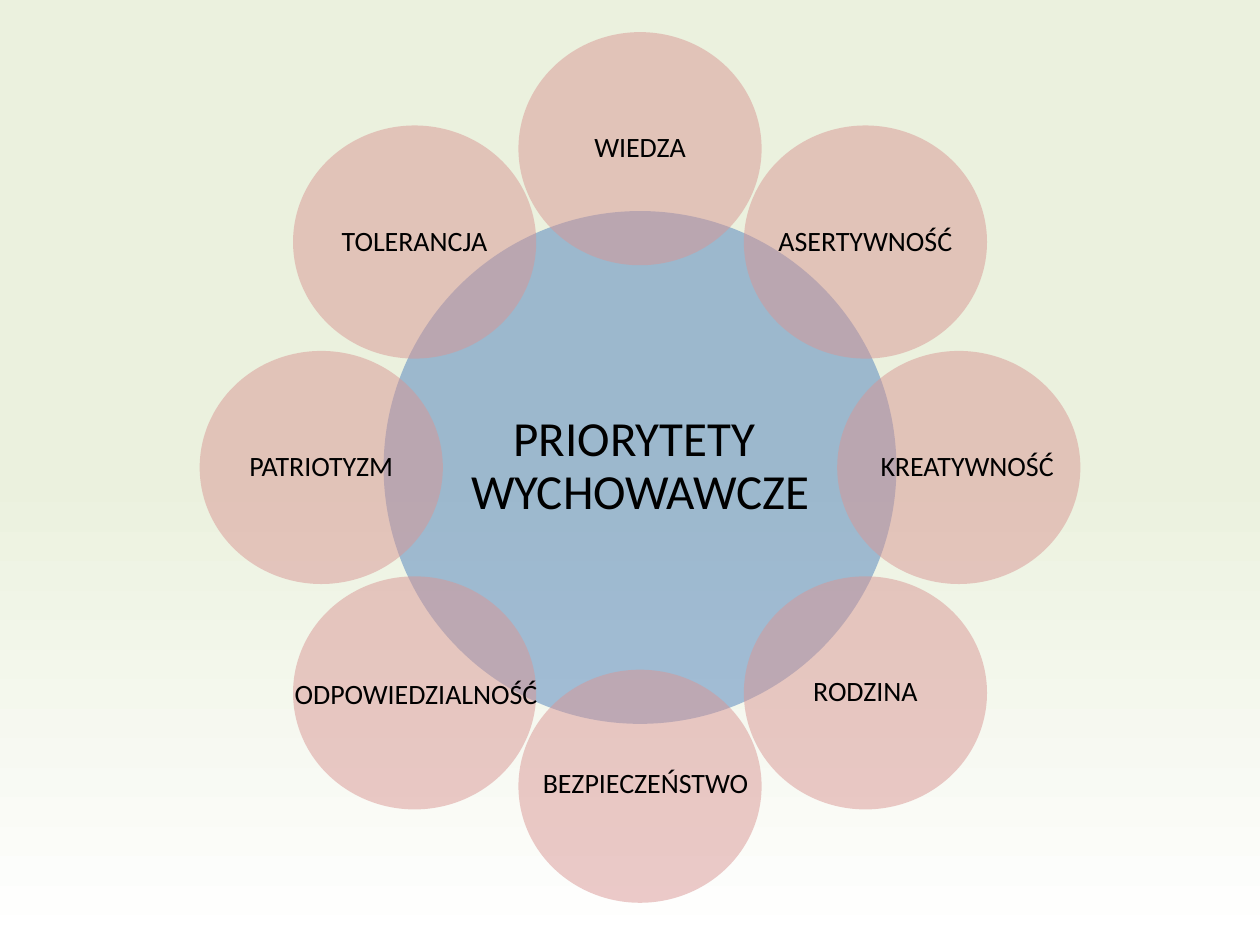
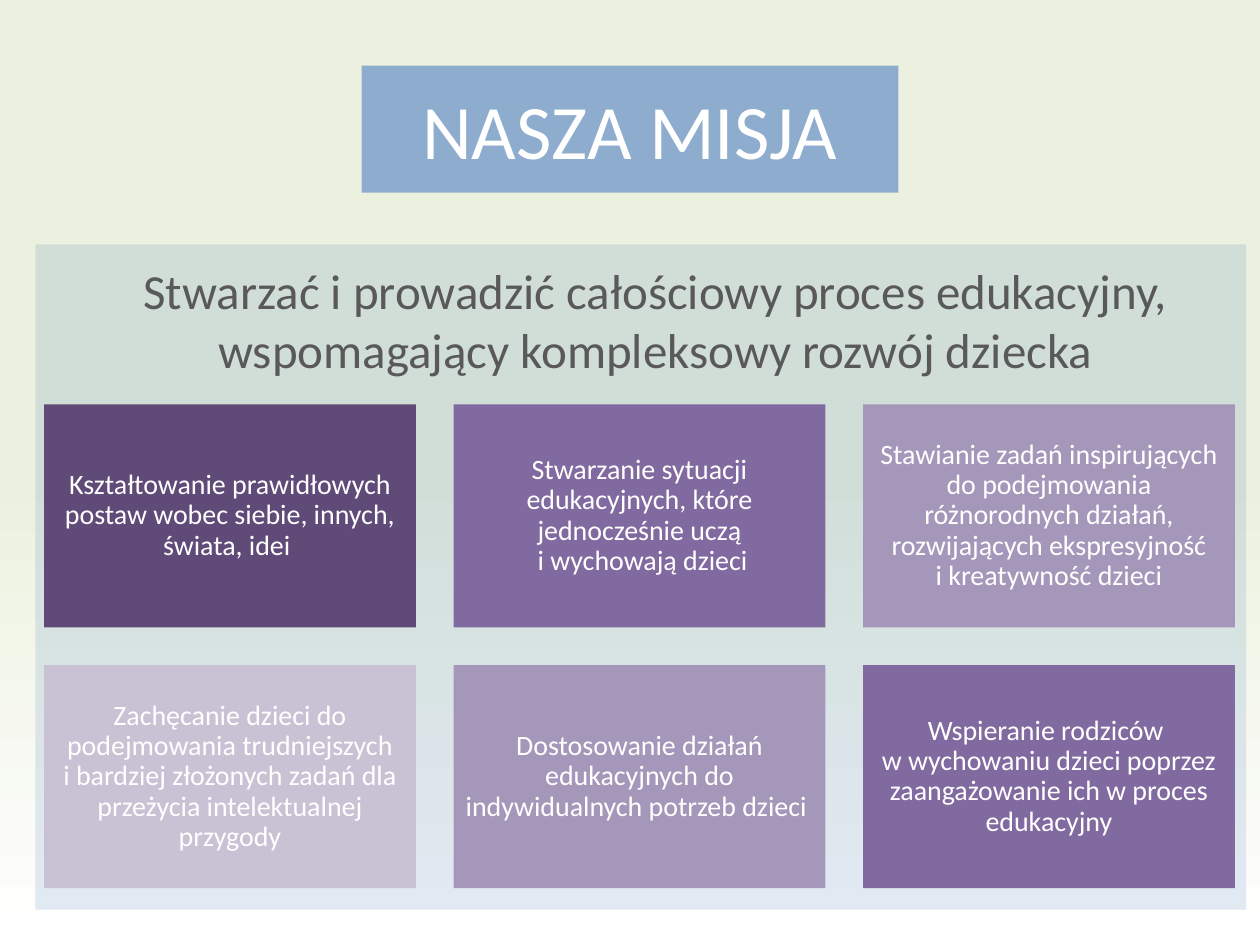
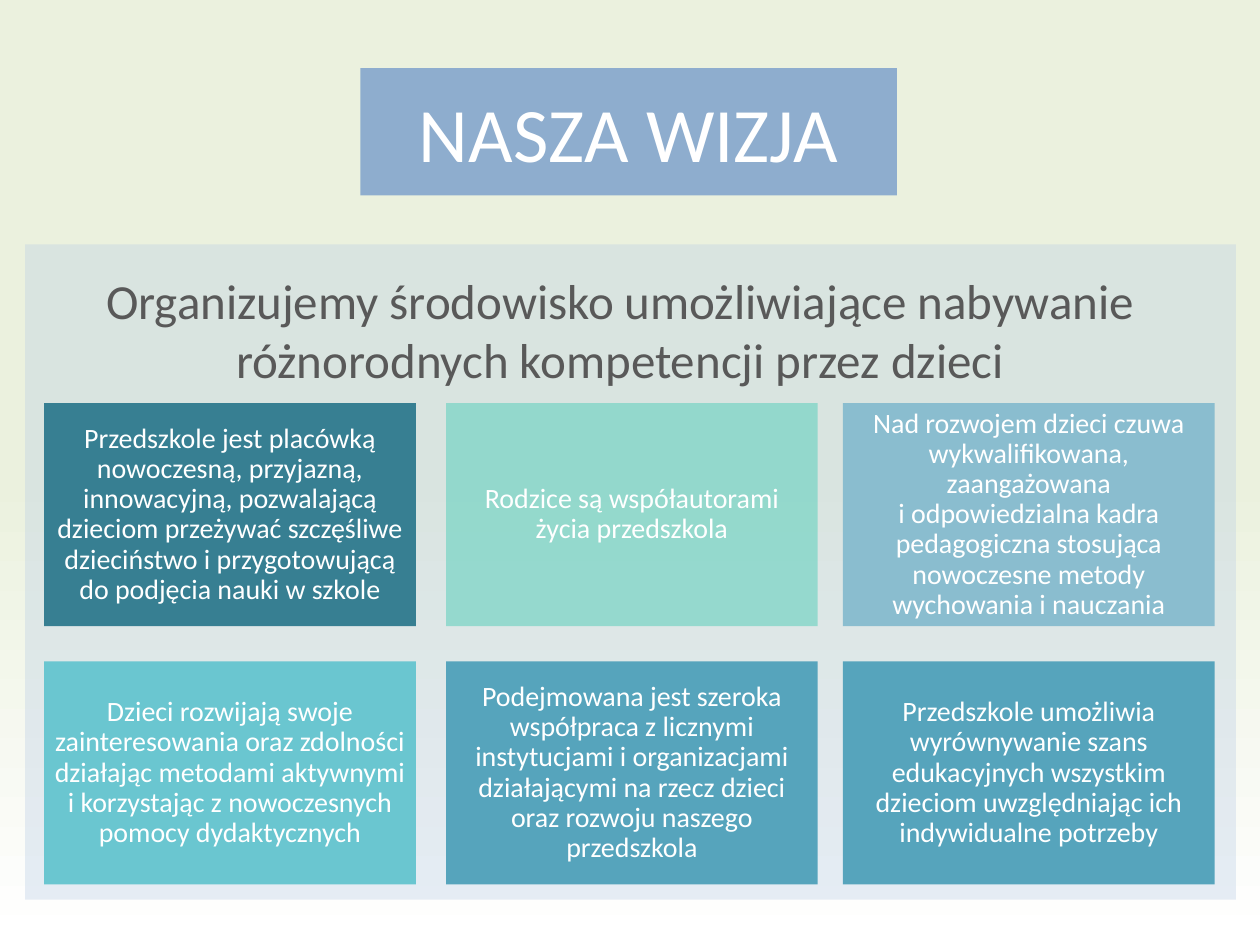
from copy import deepcopy
from dataclasses import dataclass
from itertools import product
from math import cos, radians, sin

from lxml import etree
from pptx import Presentation
from pptx import util as u
from pptx.dml.color import RGBColor
from pptx.enum import shapes, text
from pptx.oxml.ns import qn


@dataclass(frozen=True)
class Theme:
    font: str = "Calibri"
    background: tuple = ((0, "EBF1DE"), (0.5, "EBF1DE"), (1, "FFFFFF"))
    core: str = "4F81BD"
    petal: str = "D99694"
    title_band: str = "779DCB"
    vision_panel: str = "B9CDE5"
    dark: str = "000000"
    grey: str = "595959"
    light: str = "FFFFFF"
    title_size: int = 44
    lead_size: int = 28
    label_size: int = 16


class Deck:
    columns, rows = 100, 75

    def __init__(self, theme):
        self.theme = theme
        self.presentation = Presentation()
        self.presentation.slide_width = u.Inches(10)
        self.presentation.slide_height = u.Inches(7.5)
        self.slide = None

    def place(self, left, top, width, height):
        column = self.presentation.slide_width / self.columns
        row = self.presentation.slide_height / self.rows
        return [round(length * unit) for length, unit in
                zip((left, top, width, height), (column, row) * 2)]

    def new_slide(self):
        self.slide = self.presentation.slides.add_slide(self.presentation.slide_layouts[6])
        fill = self.slide.background.fill
        fill.gradient()
        fill.gradient_angle = 270
        stop_list = self.slide.element.find(".//" + qn("a:gsLst"))
        stop_list.append(deepcopy(stop_list[0]))
        for stop, (position, color) in zip(fill.gradient_stops, self.theme.background):
            stop.position = position
            stop.color.rgb = RGBColor.from_string(color)

    def block(self, area, color, opacity=100, kind=shapes.MSO_SHAPE.RECTANGLE):
        shape = self.slide.shapes.add_shape(kind, *self.place(*area))
        shape.shadow.inherit = False
        shape.line.fill.background()
        shape.fill.solid()
        shape.fill.fore_color.rgb = RGBColor.from_string(color)
        if opacity < 100:
            color_node = shape.element.spPr.find(".//" + qn("a:srgbClr"))
            etree.SubElement(color_node, qn("a:alpha"), val=str(opacity * 1000))
        return shape

    def set_text(self, shape, words, size, color, align=text.PP_ALIGN.CENTER,
                 anchor=text.MSO_ANCHOR.MIDDLE, spacing=None, inset=None, wrap=True):
        frame = shape.text_frame
        frame_format = {"word_wrap": wrap, "vertical_anchor": anchor}
        if inset is not None:
            for side in ("left", "top", "right", "bottom"):
                frame_format["margin_" + side] = u.Inches(inset)
        for name, value in frame_format.items():
            setattr(frame, name, value)
        paragraph = frame.paragraphs[0]
        paragraph.text = words
        for name, value in {"alignment": align, "line_spacing": spacing}.items():
            setattr(paragraph, name, value)
        for run in paragraph.runs:
            for name, value in {"name": self.theme.font, "size": u.Pt(size)}.items():
                setattr(run.font, name, value)
            run.font.color.rgb = RGBColor.from_string(color)

    def circle(self, center, width, height, color, words, size):
        area = (center[0] - width / 2, center[1] - height / 2, width, height)
        shape = self.block(area, color, 50, shapes.MSO_SHAPE.OVAL)
        if words:
            self.set_text(shape, words, size, self.theme.dark, spacing=0.9, inset=0, wrap=False)

    def caption(self, left, top, words):
        box = self.slide.shapes.add_textbox(*self.place(left, top, 27.6, 3.7))
        self.set_text(box, words, self.theme.label_size, self.theme.dark,
                      text.PP_ALIGN.LEFT, text.MSO_ANCHOR.TOP)

    def title(self, left, top, words):
        band = self.block((left, top, 42.6, 10.1), self.theme.title_band, 80)
        self.set_text(band, words, self.theme.title_size, self.theme.light)

    def statement(self, left, top, words):
        box = self.slide.shapes.add_textbox(*self.place(left, top, 98.4, 15))
        self.set_text(box, words, self.theme.lead_size, self.theme.grey,
                      anchor=text.MSO_ANCHOR.TOP)

    def cards(self, lefts, tops, cards):
        for (top, left), (words, color, opacity) in zip(product(tops, lefts), cards):
            card = self.block((left, top, 29.5, 17.7), color, opacity)
            self.set_text(card, words, self.theme.label_size, self.theme.light,
                          spacing=0.9, inset=0.07)


PETALS = ["WIEDZA", "ASERTYWNOŚĆ", None, "RODZINA", None, None, "PATRIOTYZM", "TOLERANCJA"]
CAPTIONS = [
    (42.1, 60.3, "BEZPIECZEŃSTWO"),
    (22.4, 53.2, "ODPOWIEDZIALNOŚĆ"),
    (68.9, 35.1, "KREATYWNOŚĆ"),
]
MISSION = [
    ("Kształtowanie prawidłowych postaw wobec siebie, innych, świata, idei ", "5F4A78", 100),
    ("Stwarzanie sytuacji edukacyjnych, które jednocześnie uczą\n i wychowają dzieci",
     "816A9F", 100),
    ("Stawianie zadań inspirujących do podejmowania różnorodnych działań, "
     "rozwijających ekspresyjność\ni kreatywność dzieci", "A597B9", 100),
    ("Zachęcanie dzieci do podejmowania trudniejszych\ni bardziej złożonych zadań "
     "dla przeżycia intelektualnej przygody", "C9C2D4", 100),
    ("Dostosowanie działań edukacyjnych do indywidualnych potrzeb dzieci ", "A597B9", 100),
    ("Wspieranie rodziców \nw wychowaniu dzieci poprzez zaangażowanie ich "
     "w proces edukacyjny", "816A9F", 100),
]
VISION = [
    ("Przedszkole jest placówką nowoczesną, przyjazną, innowacyjną, pozwalającą dzieciom "
     "przeżywać szczęśliwe dzieciństwo i przygotowującą do podjęcia nauki w szkole",
     "377F92", 100),
    ("Rodzice są współautorami życia przedszkola", "6FD3C2", 65),
    ("Nad rozwojem dzieci czuwa wykwalifikowana, zaangażowana\ni odpowiedzialna kadra "
     "pedagogiczna stosująca nowoczesne metody wychowania i nauczania", "8ABDCF", 100),
    ("Dzieci rozwijają swoje zainteresowania oraz zdolności działając metodami aktywnymi "
     "i korzystając z nowoczesnych pomocy dydaktycznych", "6AC6D0", 100),
    ("Podejmowana jest szeroka współpraca z licznymi instytucjami i organizacjami "
     "działającymi na rzecz dzieci oraz rozwoju naszego przedszkola", "56A4BC", 100),
    ("Przedszkole umożliwia wyrównywanie szans edukacyjnych wszystkim dzieciom "
     "uwzględniając ich indywidualne potrzeby", "56A4BC", 100),
]


def add_priorities(deck):
    theme = deck.theme
    center_x, center_y, orbit = 50.8, 37.1, 25.3
    deck.new_slide()
    deck.circle((center_x, center_y), 40.7, 40.7, theme.core,
                "PRIORYTETY \nWYCHOWAWCZE", theme.lead_size)
    for index, words in enumerate(PETALS):
        angle = radians(index * 360 / len(PETALS))
        center = (center_x + orbit * sin(angle), center_y - orbit * cos(angle))
        deck.circle(center, 19.3, 18.5, theme.petal, words, theme.label_size)
    for caption in CAPTIONS:
        deck.caption(*caption)


def add_mission(deck):
    deck.new_slide()
    deck.block((2.8, 19.4, 96.1, 52.8), deck.theme.core, 16)
    deck.cards((3.5, 36, 68.5), (32.1, 52.8), MISSION)
    deck.title(28.7, 5.2, "NASZA MISJA")
    deck.statement(2.8, 20.2, "Stwarzać i prowadzić całościowy proces edukacyjny, "
                   "wspomagający kompleksowy rozwój dziecka")


def add_vision(deck):
    deck.new_slide()
    deck.block((2, 19.4, 96.1, 52), deck.theme.vision_panel, 35)
    deck.cards((3.5, 35.4, 66.9), (32, 52.5), VISION)
    deck.title(28.6, 5.4, "NASZA WIZJA")
    deck.statement(0, 21, "Organizujemy środowisko umożliwiające nabywanie "
                   "różnorodnych kompetencji przez dzieci")


def main():
    deck = Deck(Theme())
    for add_slide in (add_priorities, add_mission, add_vision):
        add_slide(deck)
    deck.presentation.save("out.pptx")


if __name__ == "__main__":
    main()
